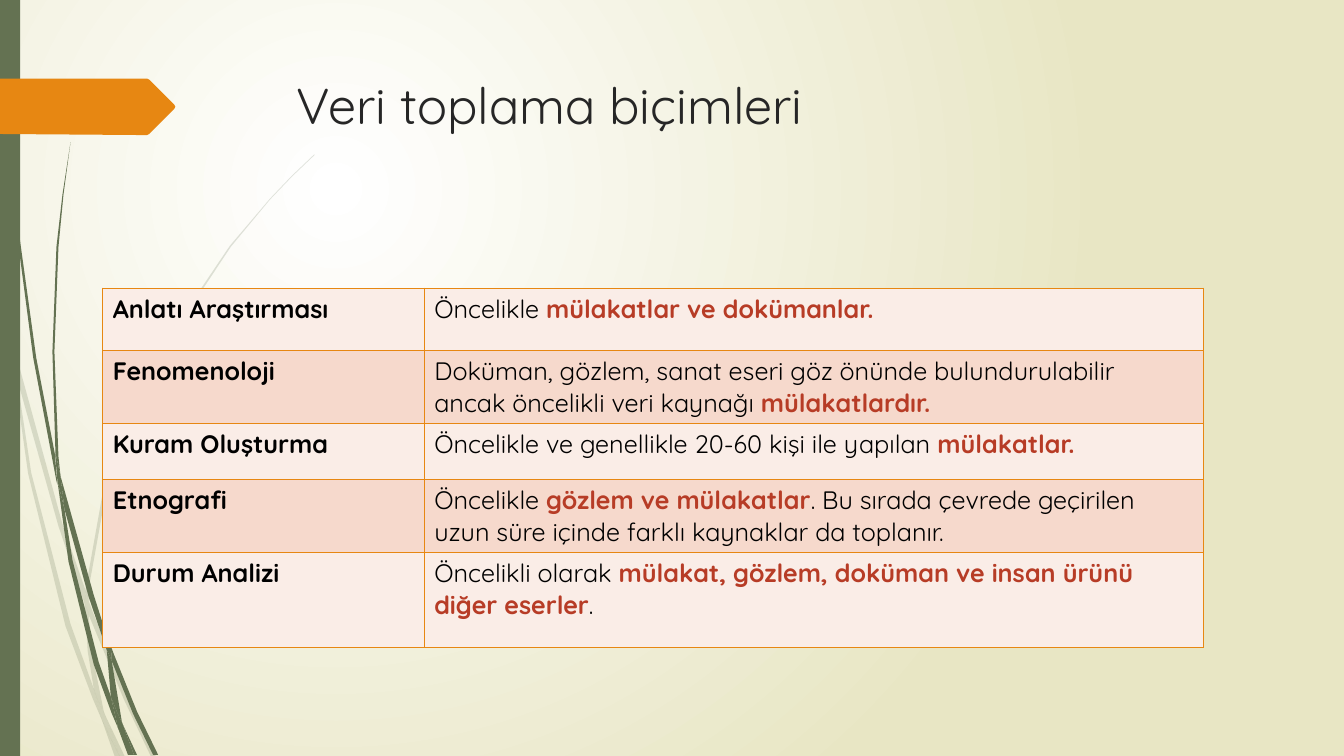
from lxml import etree
from pptx import Presentation
from pptx.dml.color import RGBColor
from pptx.enum.text import MSO_ANCHOR, MSO_AUTO_SIZE, PP_ALIGN
from pptx.enum.shapes import MSO_SHAPE
from pptx.oxml.ns import qn
from pptx.util import Cm, Pt

LEFT = PP_ALIGN.LEFT
TOP = MSO_ANCHOR.TOP
NO_AUTOFIT = MSO_AUTO_SIZE.NONE
RECTANGLE = MSO_SHAPE.RECTANGLE

WHITE = RGBColor(0xFF, 0xFF, 0xFF)
BLACK = RGBColor(0x00, 0x00, 0x00)
CREAM = RGBColor(0xE8, 0xE6, 0xC4)
GREEN = RGBColor(0x64, 0x72, 0x52)
ORANGE = RGBColor(0xE7, 0x87, 0x12)
CHARCOAL = RGBColor(0x26, 0x26, 0x26)
RED = RGBColor(0xB7, 0x3C, 0x26)
BAND_COLORS = (RGBColor(0xFA, 0xED, 0xE7), RGBColor(0xF6, 0xD9, 0xCC))

FONT = "Quicksand"
OUTLINE_UNIT = Cm(0.0254)

PALE_GRASS = (
    ((11, 350), (9, 322), (0, 282), (0, 299), (10, 344)),
    ((58, 522), (84, 599), (85, 586), (62, 520), (14, 345), (17, 376)),
    ((92, 607), (88, 596), (88, 610), (123, 694), (150, 751), (155, 751), (127, 692)),
    ((119, 751), (124, 751), (105, 711)),
    ((93, 683), (70, 619), (31, 469), (17, 376), (11, 350), (28, 470), (65, 621),
     (92, 693), (101, 714), (99, 707)),
    ((84, 599), (87, 646), (93, 683), (96, 692), (105, 711), (103, 706), (91, 646),
     (88, 610), (88, 608)),
    ((88, 584), (110, 462), (160, 349), (229, 245), (268, 198), (290, 175), (312, 154),
     (312, 153), (289, 175), (268, 197), (228, 244), (158, 348), (107, 461), (85, 584),
     (85, 586), (88, 596)),
    ((101, 714), (114, 751), (119, 751)),
    ((88, 608), (88, 610), (88, 596), (85, 586), (84, 599)),
    ((96, 692), (93, 683), (99, 707), (101, 714), (119, 751), (105, 711)),
)

DARK_GRASS = (
    ((7, 110), (17, 233), (33, 355), (56, 477), (57, 481), (55, 457), (55, 453), (36, 355),
     (19, 232), (8, 109), (5, 48), (4, 0), (3, 0), (4, 48)),
    ((88, 592), (106, 645), (106, 631), (93, 590), (60, 472), (64, 505)),
    ((113, 649), (110, 641), (111, 656), (132, 708), (152, 749), (157, 749), (136, 706)),
    ((110, 691), (98, 657), (72, 556), (64, 505), (57, 477), (68, 557), (93, 659),
     (111, 708), (117, 722), (116, 717)),
    ((60, 472), (58, 453), (54, 349), (58, 245), (63, 193), (70, 141), (62, 193),
     (56, 245), (52, 349), (55, 449)),
    ((133, 749), (136, 749), (122, 719)),
    ((57, 477), (64, 505), (60, 472), (55, 449), (55, 453)),
    ((111, 633), (125, 552), (158, 476), (205, 406), (231, 374), (245, 359), (261, 344),
     (260, 344), (245, 358), (231, 373), (204, 405), (156, 474), (122, 551), (106, 631),
     (110, 641)),
    ((117, 722), (127, 749), (131, 749)),
    ((106, 645), (110, 691), (116, 706), (122, 719), (121, 716), (111, 656), (109, 651)),
    ((106, 645), (109, 651), (111, 656), (110, 641), (106, 631)),
    ((116, 706), (110, 691), (116, 717), (117, 722), (130, 749), (133, 749), (122, 719)),
)

ARROW = ((0, 78), (146, 78), (148, 79), (173, 104), (174, 106), (173, 108), (148, 133),
         (146, 134), (136, 134), (0, 133))

METHODS = (
    ("Anlatı Araştırması", ("Öncelikle ", "mülakatlar ve dokümanlar.")),
    ("Fenomenoloji",
     ("Doküman, gözlem, sanat eseri göz önünde bulundurulabilir ancak öncelikli veri kaynağı ",
      "mülakatlardır.")),
    ("Kuram Oluşturma",
     ("Öncelikle ve genellikle 20-60 kişi ile yapılan ", "mülakatlar.")),
    ("Etnografi",
     ("Öncelikle ", "gözlem ve mülakatlar",
      ". Bu sırada çevrede geçirilen uzun süre içinde farklı kaynaklar da toplanır.")),
    ("Durum Analizi",
     ("Öncelikli olarak ", "mülakat, gözlem, doküman ve insan ürünü diğer eserler", ".")),
)
COLUMN_WIDTHS = (8.1, 19.63)
ROW_HEIGHTS = (1.57, 1.4, 1.4, 1.85, 2.39)


def add_text(paragraph, text, size=18, color=BLACK, bold=False):
    run = paragraph.add_run()
    run.text = text
    run.font.name = FONT
    run.font.size = Pt(size)
    run.font.bold = bold
    run.font.color.rgb = color


def paint(shape, color, opacity=100):
    shape.shadow.inherit = False
    shape.fill.solid()
    shape.fill.fore_color.rgb = color
    shape.line.fill.background()
    if opacity < 100:
        color_element = shape.element.spPr.find(qn("a:solidFill"))[0]
        etree.SubElement(color_element, qn("a:alpha"), val=str(opacity * 1000))


def add_outline(shapes, points, color, opacity=100):
    builder = shapes.build_freeform(*points[0], scale=OUTLINE_UNIT)
    builder.add_line_segments(points[1:], close=True)
    paint(builder.convert_to_shape(), color, opacity)


def add_grass(slide, blades, opacity=100):
    group = slide.shapes.add_group_shape()
    for blade in blades:
        add_outline(group.shapes, blade, GREEN, opacity)


def set_background(slide):
    fill = slide.background.fill
    fill.gradient()
    for stop, color in zip(fill.gradient_stops, (WHITE, CREAM)):
        stop.color.rgb = color
    gradient = slide.element.find(".//" + qn("a:gradFill"))
    gradient.remove(gradient.find(qn("a:lin")))
    circle = etree.SubElement(gradient, qn("a:path"), path="circle")
    etree.SubElement(circle, qn("a:fillToRect"), l="50000", t="50000", r="100000", b="100000")


def set_title(slide, text):
    title = slide.shapes.title
    title.left, title.top, title.width, title.height = Cm(7.21), Cm(1.73), Cm(24.77), Cm(3.56)
    frame = title.text_frame
    frame.word_wrap = True
    frame.auto_size = NO_AUTOFIT
    frame.vertical_anchor = TOP
    paragraph = frame.paragraphs[0]
    paragraph.alignment = LEFT
    add_text(paragraph, text, size=36, color=CHARCOAL)


def format_cell(cell, fill_color):
    properties = cell._tc.get_or_add_tcPr()
    for side in ("a:lnL", "a:lnR", "a:lnT", "a:lnB"):
        border = etree.SubElement(properties, qn(side), w=str(Pt(1)))
        solid = etree.SubElement(border, qn("a:solidFill"))
        etree.SubElement(solid, qn("a:srgbClr"), val=str(ORANGE))
    cell.fill.solid()
    cell.fill.fore_color.rgb = fill_color


def add_methods_table(slide):
    frame = slide.shapes.add_table(len(METHODS), len(COLUMN_WIDTHS), Cm(2.59), Cm(7.26),
                                   Cm(sum(COLUMN_WIDTHS)), Cm(sum(ROW_HEIGHTS)))
    table = frame.table
    table.first_row = False
    table.horz_banding = False
    for column, width in zip(table.columns, COLUMN_WIDTHS):
        column.width = Cm(width)
    for index, (method, sources) in enumerate(METHODS):
        row = table.rows[index]
        row.height = Cm(ROW_HEIGHTS[index])
        method_cell, sources_cell = row.cells
        for cell in (method_cell, sources_cell):
            format_cell(cell, BAND_COLORS[index % 2])
        add_text(method_cell.text_frame.paragraphs[0], method, bold=True)
        for position, text in enumerate(sources):
            emphasised = position % 2 == 1
            add_text(sources_cell.text_frame.paragraphs[0], text,
                     color=RED if emphasised else BLACK, bold=emphasised)


def main():
    presentation = Presentation()
    presentation.slide_width = Cm(33.87)
    presentation.slide_height = Cm(19.05)
    slide = presentation.slides.add_slide(presentation.slide_layouts[5])
    set_background(slide)
    add_grass(slide, PALE_GRASS, opacity=20)
    add_grass(slide, DARK_GRASS)
    stripe = slide.shapes.add_shape(RECTANGLE, 0, 0, Cm(0.51), presentation.slide_height)
    paint(stripe, GREEN)
    add_outline(slide.shapes, ARROW, ORANGE)
    set_title(slide, "Veri toplama biçimleri")
    add_methods_table(slide)
    presentation.save("out.pptx")


if __name__ == "__main__":
    main()
